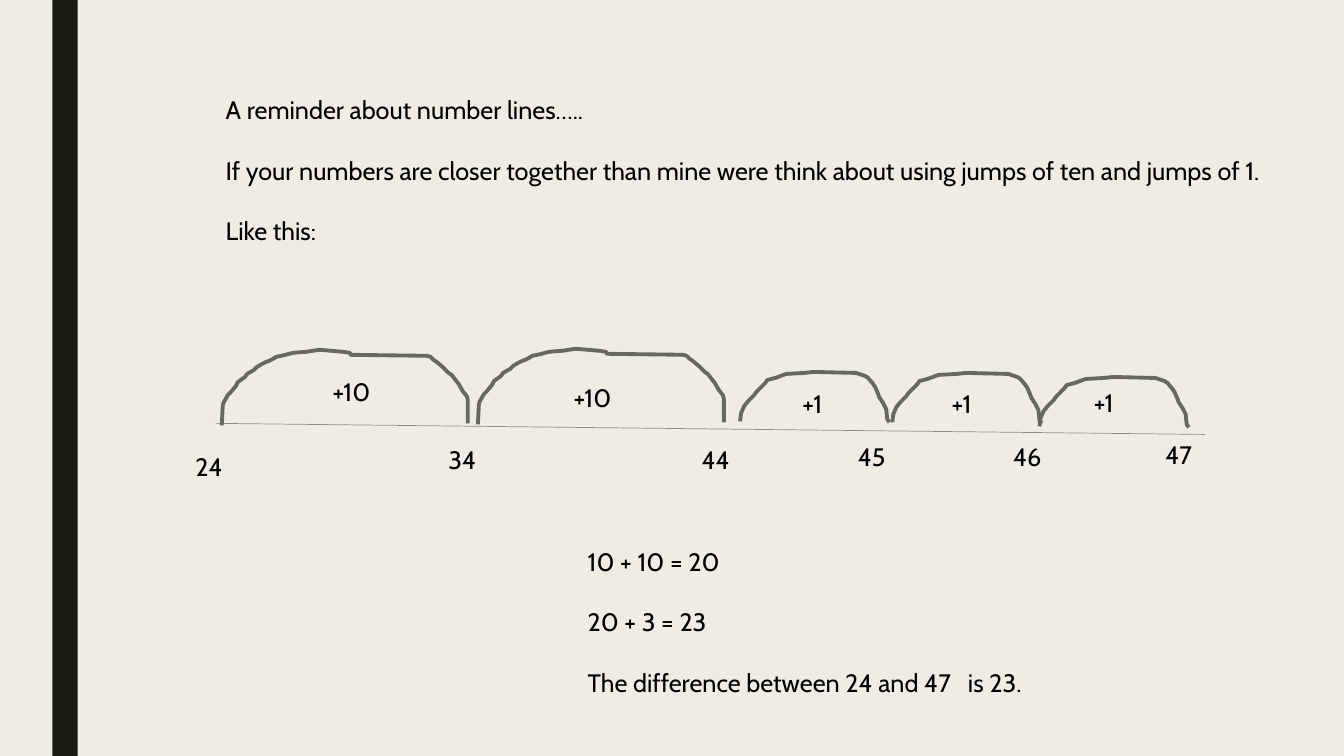
from dataclasses import dataclass
from lxml.etree import SubElement
from pptx import Presentation
from pptx.dml.color import RGBColor
from pptx.enum.shapes import MSO_CONNECTOR as Connector, MSO_SHAPE as Shape
from pptx.enum.text import MSO_AUTO_SIZE as AutoSize
from pptx.oxml.ns import qn
from pptx.util import Inches, Pt

# Content: words, then (left, top, width) in inches
REMINDER = [
    "A reminder about number lines…..",
    "If your numbers are closer together than mine were think about using jumps of ten and jumps of 1.",
    "Like this:",
]
WORKING = [
    "10 + 10 = 20",
    "20 + 3 = 23",
    "The difference between 24 and 47   is 23.",
]
PARAGRAPHS = [(REMINDER, 2.14, 0.89, 11.04), (WORKING, 5.73, 5.37, 4.96)]

# Numbers under the line: text, left, top
NUMBERS = [
    ("24", 1.84, 4.43), ("34", 4.35, 4.36), ("44", 6.86, 4.36),
    ("45", 8.41, 4.33), ("46", 9.95, 4.33), ("47", 11.46, 4.31),
]

# Hand-drawn arcs, in hundredths of an inch from their top left corner
TEN_ARC = [
    (0, 75), (1, 55), (2, 52), (6, 45), (9, 42), (14, 36), (16, 32), (23, 27),
    (25, 24), (32, 20), (35, 17), (40, 14), (44, 12), (47, 11), (51, 9),
    (54, 7), (59, 6), (63, 5), (71, 3), (84, 2), (97, 0), (120, 2), (127, 3),
    (128, 5), (203, 6), (207, 7), (210, 10), (213, 12), (219, 17), (225, 23),
    (228, 25), (235, 34), (239, 41), (243, 46), (244, 50), (244, 73),
]
ONE_ARC = [
    (0, 49), (1, 41), (4, 34), (8, 29), (14, 23), (16, 20), (25, 11), (27, 8),
    (35, 6), (43, 3), (46, 2), (64, 1), (73, 0), (115, 1), (121, 3), (124, 4),
    (127, 6), (132, 12), (134, 15), (137, 22), (138, 25), (142, 31), (145, 37),
    (146, 47), (148, 50),
]
# Jumps: arc, its left and top, label, label's left and top
JUMPS = [
    (TEN_ARC, 2.20, 3.47, "+10", 3.20, 3.68),
    (TEN_ARC, 4.74, 3.46, "+10", 5.59, 3.74),
    (ONE_ARC, 7.34, 3.69, "+1", 7.86, 3.80),
    (ONE_ARC, 8.85, 3.70, "+1", 9.34, 3.80),
    (ONE_ARC, 10.31, 3.74, "+1", 10.75, 3.79),
]
LINE_ENDS = [(2.14, 4.2), (11.95, 4.31)]
LABEL_WIDTH = 0.97
LINE_HEIGHT, PARAGRAPH_STEP = 0.41, 0.605


@dataclass(frozen=True)
class Theme:
    paper: RGBColor = RGBColor.from_string("EFEDE3")
    bar: RGBColor = RGBColor.from_string("191B0E")
    text: RGBColor = RGBColor.from_string("000000")
    rule: RGBColor = RGBColor.from_string("8C8D86")
    arc: RGBColor = RGBColor.from_string("686863")
    font: str = "Cabin"
    size: Pt = Pt(18)
    gap: Pt = Pt(21.6)
    rule_width: Pt = Pt(0.5)
    arc_width: Pt = Pt(2.75)


THEME = Theme()


def write(slide, lines, left, top, width):
    height = LINE_HEIGHT + PARAGRAPH_STEP * (len(lines) - 1)
    box = slide.shapes.add_textbox(Inches(left), Inches(top), Inches(width), Inches(height))
    frame = box.text_frame
    frame.word_wrap = True
    frame.auto_size = AutoSize.SHAPE_TO_FIT_TEXT
    for index, line in enumerate(lines):
        paragraph = frame.add_paragraph() if index else frame.paragraphs[0]
        if index:
            paragraph.space_before = THEME.gap
        run = paragraph.add_run()
        run.text = line
        run.font.name, run.font.size = THEME.font, THEME.size
        run.font.color.rgb = THEME.text


def draw_arc(slide, points, left, top):
    builder = slide.shapes.build_freeform(*points[0], scale=Inches(0.01))
    builder.add_line_segments(points[1:], close=False)
    arc = builder.convert_to_shape(Inches(left), Inches(top))
    arc.shadow.inherit = False
    arc.fill.background()
    arc.line.color.rgb = THEME.arc
    arc.line.width = THEME.arc_width
    SubElement(arc.line._get_or_add_ln(), qn("a:round"))


def main():
    deck = Presentation()
    deck.slide_width, deck.slide_height = Inches(13.33), Inches(7.5)
    slide = deck.slides.add_slide(deck.slide_layouts[6])
    slide.background.fill.solid()
    slide.background.fill.fore_color.rgb = THEME.paper

    # Side bar
    bar = slide.shapes.add_shape(Shape.RECTANGLE, Inches(0.52), 0, Inches(0.25), deck.slide_height)
    bar.shadow.inherit = False
    bar.fill.solid()
    bar.fill.fore_color.rgb = THEME.bar
    bar.line.fill.background()

    # Number line
    ends = [Inches(value) for point in LINE_ENDS for value in point]
    rule = slide.shapes.add_connector(Connector.STRAIGHT, *ends)
    rule.line.color.rgb = THEME.rule
    rule.line.width = THEME.rule_width
    SubElement(rule._element.spPr, qn("a:effectLst"))

    # Jumps and numbers
    for points, left, top, label, label_left, label_top in JUMPS:
        draw_arc(slide, points, left, top)
        write(slide, [label], label_left, label_top, LABEL_WIDTH)
    for number, left, top in NUMBERS:
        write(slide, [number], left, top, LABEL_WIDTH)

    # Reminder and working
    for lines, left, top, width in PARAGRAPHS:
        write(slide, lines, left, top, width)

    deck.save("out.pptx")


if __name__ == "__main__":
    main()
